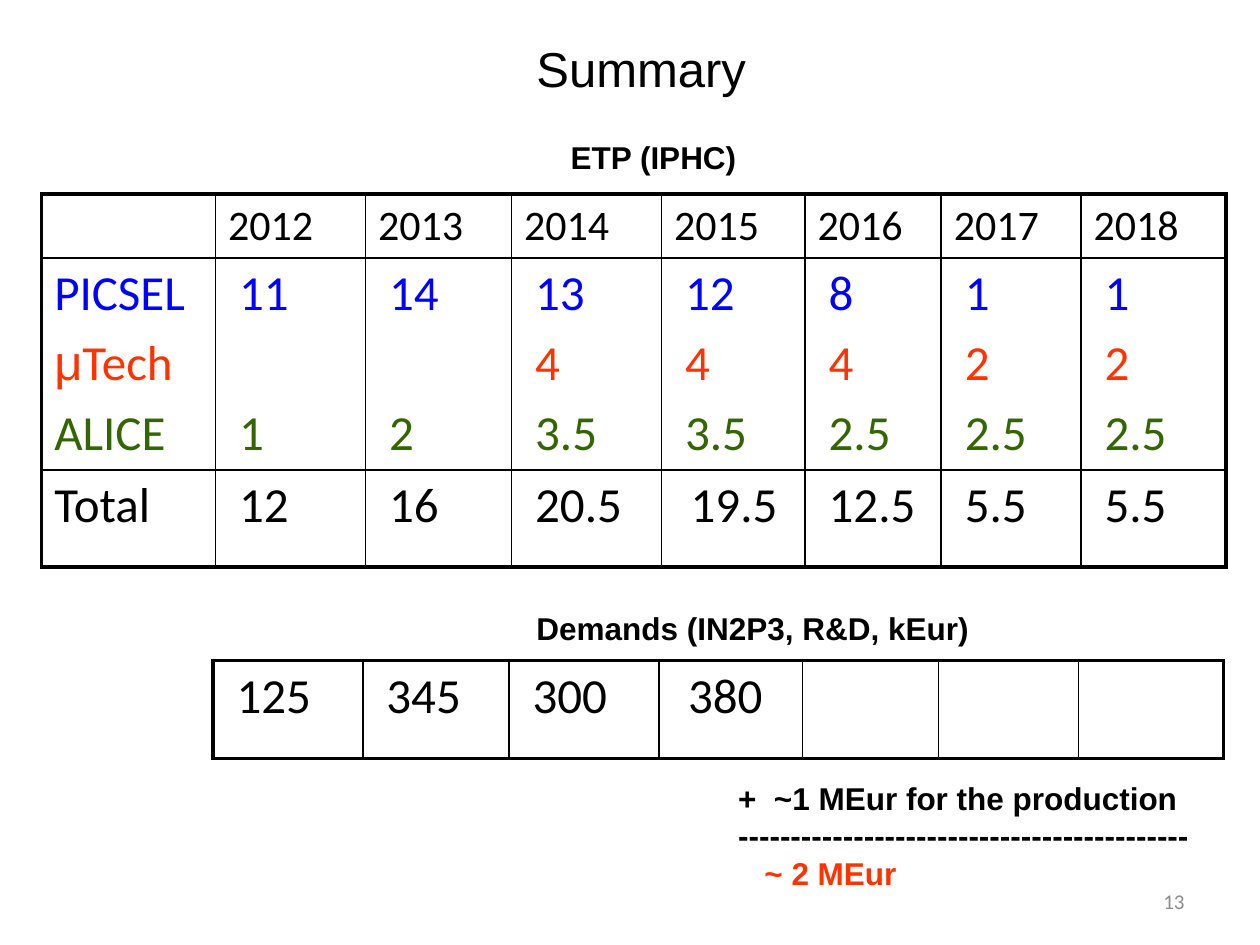
from dataclasses import dataclass

from lxml import etree
from pptx import Presentation
from pptx import util as u
from pptx.dml.color import RGBColor
from pptx.enum import text
from pptx.oxml.ns import qn


@dataclass(frozen=True)
class Theme:
    black: str = "000000"
    blue: str = "0000FF"
    red: str = "FF3300"
    green: str = "336600"
    grey: str = "8C8C8C"
    body: str = "Arial"
    grid: str = "Calibri"
    title_size: float = 28
    value_size: float = 28
    year_size: float = 24
    label_size: float = 18
    number_size: float = 12
    thin: float = 1
    thick: float = 2.25
    cell_margin: float = 7.2
    value_margin: float = 13.5
    wide_value_margin: float = 16.7


THEME = Theme()


@dataclass(frozen=True)
class Run:
    text: str
    size: float = THEME.label_size
    color: str = THEME.black
    font: str = THEME.body
    bold: bool = False


@dataclass(frozen=True)
class Line:
    runs: tuple[Run, ...]
    indent: float = 0


@dataclass(frozen=True)
class Box:
    left: float
    top: float
    width: float
    height: float
    lines: tuple[Line, ...]


@dataclass(frozen=True)
class Entry:
    lines: tuple[tuple[Run, ...], ...] = ()
    margin: float = THEME.cell_margin


def add_runs(paragraph, runs: tuple[Run, ...]) -> None:
    for item in runs:
        run = paragraph.add_run()
        run.text = item.text
        run.font.size = u.Pt(item.size)
        run.font.name = item.font
        run.font.bold = item.bold
        run.font.color.rgb = RGBColor.from_string(item.color)


def add_box(slide, box: Box):
    shape = slide.shapes.add_textbox(*map(u.Pt, (box.left, box.top, box.width, box.height)))
    frame = shape.text_frame
    frame.word_wrap = False
    frame.auto_size = text.MSO_AUTO_SIZE.SHAPE_TO_FIT_TEXT
    for index, line in enumerate(box.lines):
        paragraph = frame.add_paragraph() if index else frame.paragraphs[0]
        if line.indent:
            properties = paragraph._p.get_or_add_pPr()
            properties.set("marL", str(u.Pt(line.indent)))
            properties.set("indent", "0")
        add_runs(paragraph, line.runs)
    return shape


def set_borders(cell, widths: dict[str, float]) -> None:
    properties = cell._tc.get_or_add_tcPr()
    for position, (side, width) in enumerate(widths.items()):
        border = etree.Element(qn(f"a:ln{side}"), w=str(u.Pt(width)))
        fill = etree.SubElement(border, qn("a:solidFill"))
        etree.SubElement(fill, qn("a:srgbClr"), val=THEME.black)
        properties.insert(position, border)


def fill_cell(cell, entry: Entry) -> None:
    cell.fill.background()
    cell.margin_left = u.Pt(entry.margin)
    for index, runs in enumerate(entry.lines):
        frame = cell.text_frame
        paragraph = frame.add_paragraph() if index else frame.paragraphs[0]
        spacing = etree.SubElement(paragraph._p.get_or_add_pPr(), qn("a:spcBef"))
        etree.SubElement(spacing, qn("a:spcPct"), val="20000")
        add_runs(paragraph, runs)
        if not runs:
            size = str(int(THEME.value_size * 100))
            etree.SubElement(paragraph._p, qn("a:endParaRPr"), sz=size)


def add_grid(slide, left: float, top: float, height: float, columns: list[float],
             rows: list[float], entries: list[list[Entry]]) -> None:
    shape = slide.shapes.add_table(len(rows), len(columns), u.Pt(left), u.Pt(top),
                                   u.Pt(sum(columns)), u.Pt(height))
    table = shape.table
    table.first_row = table.horz_banding = False
    for column, width in zip(table.columns, columns):
        column.width = u.Pt(width)
    for row, row_height in zip(table.rows, rows):
        row.height = u.Pt(row_height)
    shape.height = u.Pt(height)
    last_row, last_column = len(rows) - 1, len(columns) - 1
    for i, row_entries in enumerate(entries):
        for j, entry in enumerate(row_entries):
            cell = table.cell(i, j)
            fill_cell(cell, entry)
            outer = {"L": j == 0, "R": j == last_column, "T": i == 0, "B": i == last_row}
            set_borders(cell, {side: THEME.thick if edge else THEME.thin
                               for side, edge in outer.items()})


def grid_run(value: str, color: str = THEME.black, size: float = THEME.value_size) -> Run:
    return Run(value, size, color, THEME.grid)


def value_entry(value: str, wide: bool) -> Entry:
    if not value:
        return Entry()
    margin = THEME.wide_value_margin if wide else THEME.value_margin
    return Entry(((grid_run(value),),), margin)


def value_row(values: list[str]) -> list[Entry]:
    return [value_entry(value, year == "2015") for year, value in zip(YEARS, values)]


def label(value: str, color: str = THEME.black) -> Run:
    return Run(value, color=color, bold=True)


YEARS = [str(year) for year in range(2012, 2019)]
YEAR_WIDTHS = [85.68, 83.52, 85.68, 82.08, 77.76, 79.92, 82.8]
NAME_WIDTH = 99.36
TOTAL_HEIGHT = 55.44
TEAM_COLORS = (THEME.blue, THEME.red, THEME.green)
STAFF = [
    ("11", "14", "13", "12", "8", "1", "1"),
    ("", "", "4", "4", "4", "2", "2"),
    ("1", "2", "3.5", "3.5", "2.5", "2.5", "2.5"),
]
TOTALS = ["12", "16", "20.5", "19.5", "12.5", "5.5", "5.5"]
DEMANDS = ["125", "345", "300", "380", "", "", ""]
TEAMS = Entry((
    (grid_run("PICSEL", THEME.blue),),
    (Run("μ", THEME.value_size, THEME.red), grid_run("Tech", THEME.red)),
    (grid_run("ALICE", THEME.green),),
))
BOXES = [
    Box(299.5, 18.7, 139.7, 41, (Line((Run("Summary", THEME.title_size), label(" "))),)),
    Box(319, 75.6, 109.4, 28.8, (Line((label("ETP (IPHC)"),)),)),
    Box(299.5, 344.2, 261.4, 28.8, (Line((label("Demands (IN2P3, R&D, kEur)"),)),)),
    Box(414.7, 441.4, 272.2, 72, (
        Line((label("+  ~1 MEur for the production"),)),
        Line((label("-" * 43),)),
        Line((label("~ 2 MEur", THEME.red),), indent=15),
    )),
]


def main() -> None:
    presentation = Presentation()
    presentation.slide_width, presentation.slide_height = u.Pt(720), u.Pt(540)
    slide = presentation.slides.add_slide(presentation.slide_layouts[6])

    page = Run("13", THEME.number_size, THEME.grey, THEME.grid)
    number = add_box(slide, Box(516.2, 500.4, 167.8, 28.8, (Line((page,)),)))
    number.text_frame.word_wrap = True
    number.text_frame.auto_size = text.MSO_AUTO_SIZE.NONE
    number.text_frame.vertical_anchor = text.MSO_ANCHOR.MIDDLE
    number.text_frame.paragraphs[0].alignment = text.PP_ALIGN.RIGHT

    header = [Entry()] + [Entry(((grid_run(year, size=THEME.year_size),),)) for year in YEARS]
    staff = [TEAMS] + [
        Entry(tuple((grid_run(value, color),) if value else ()
                    for value, color in zip(values, TEAM_COLORS)), THEME.value_margin)
        for values in zip(*STAFF)
    ]
    totals = [Entry(((grid_run("Total"),),))] + value_row(TOTALS)
    add_grid(slide, 23.8, 110.9, 213.1, [NAME_WIDTH] + YEAR_WIDTHS,
             [27.4, 75.6, TOTAL_HEIGHT], [header, staff, totals])
    add_grid(slide, 121.7, 377.3, 56.2, YEAR_WIDTHS, [56.2], [value_row(DEMANDS)])

    for box in BOXES:
        add_box(slide, box)
    presentation.save("out.pptx")


if __name__ == "__main__":
    main()
